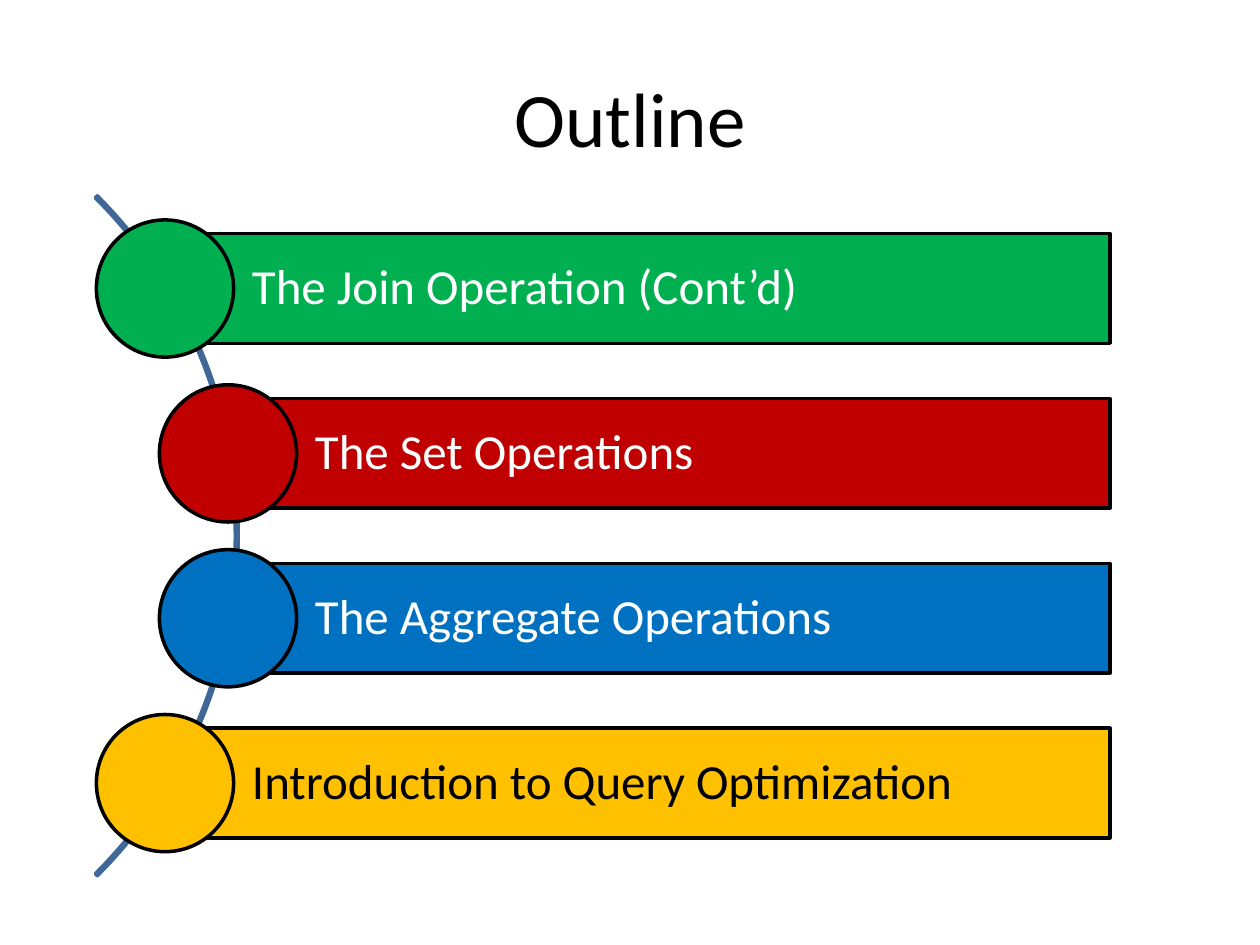
from pptx import Presentation
from pptx.dml.color import RGBColor
from pptx.enum.shapes import MSO_SHAPE
from pptx.enum.text import MSO_ANCHOR, PP_ALIGN
from pptx.util import Pt

BLACK = RGBColor(0x00, 0x00, 0x00)
WHITE = RGBColor(0xFF, 0xFF, 0xFF)
GREEN = RGBColor(0x00, 0xB0, 0x50)
RED = RGBColor(0xC0, 0x00, 0x00)
BLUE = RGBColor(0x00, 0x70, 0xC0)
AMBER = RGBColor(0xFF, 0xC0, 0x00)
ARC_BLUE = RGBColor(0x3F, 0x67, 0x97)
FONT = "Calibri"

HEADING = "Outline"
TOPICS = [
    ("The Join Operation (Cont’d)", GREEN, WHITE, 94.3),
    ("The Set Operations", RED, WHITE, 130.3),
    ("The Aggregate Operations", BLUE, WHITE, 130.3),
    ("Introduction to Query Optimization", AMBER, BLACK, 94.3),
]

BAR_RIGHT = 634.3
BAR_HEIGHT = 62.7
DOT_SIZE = 78.4
PITCH = 94.2
CENTER_Y = 306.2
ARC_SIZE = 549.4
ARC_LEFT = -413.3


def add_outlined(slide, preset, left, top, width, height, line_color, fill=None):
    shape = slide.shapes.add_shape(preset, Pt(left), Pt(top), Pt(width), Pt(height))
    shape.shadow.inherit = False
    shape.line.color.rgb = line_color
    shape.line.width = Pt(2)
    if fill is None:
        shape.fill.background()
    else:
        shape.fill.solid()
        shape.fill.fore_color.rgb = fill
    return shape


def add_run(paragraph, text, size, color):
    run = paragraph.add_run()
    run.text = text
    run.font.name = FONT
    run.font.size = Pt(size)
    run.font.color.rgb = color


def add_topic(slide, index, label, fill, text_color, left):
    middle = CENTER_Y + (index - (len(TOPICS) - 1) / 2) * PITCH
    bar = add_outlined(slide, MSO_SHAPE.RECTANGLE, left, middle - BAR_HEIGHT / 2,
                       BAR_RIGHT - left, BAR_HEIGHT, BLACK, fill)
    frame = bar.text_frame
    frame.word_wrap = True
    frame.vertical_anchor = MSO_ANCHOR.MIDDLE
    frame.margin_left = Pt(49.7)
    frame.margin_top = frame.margin_right = frame.margin_bottom = Pt(5.6)
    paragraph = frame.paragraphs[0]
    paragraph.alignment = PP_ALIGN.LEFT
    paragraph.line_spacing = 0.9
    add_run(paragraph, label, 28, text_color)
    add_outlined(slide, MSO_SHAPE.OVAL, left - DOT_SIZE / 2, middle - DOT_SIZE / 2,
                 DOT_SIZE, DOT_SIZE, BLACK, fill)


def main():
    deck = Presentation()
    deck.slide_width, deck.slide_height = Pt(720), Pt(540)
    slide = deck.slides.add_slide(deck.slide_layouts[5])

    heading = slide.shapes.title
    heading.left, heading.top = Pt(36), Pt(21.6)
    heading.width, heading.height = Pt(648), Pt(90)
    heading.text_frame.vertical_anchor = MSO_ANCHOR.MIDDLE
    paragraph = heading.text_frame.paragraphs[0]
    paragraph.alignment = PP_ALIGN.CENTER
    add_run(paragraph, HEADING, 44, BLACK)

    arc = add_outlined(slide, MSO_SHAPE.BLOCK_ARC, ARC_LEFT, CENTER_Y - ARC_SIZE / 2,
                       ARC_SIZE, ARC_SIZE, ARC_BLUE)
    for position, value in enumerate((189, 27, 0.003)):
        arc.adjustments[position] = value

    for index, topic in enumerate(TOPICS):
        add_topic(slide, index, *topic)

    deck.save("out.pptx")


if __name__ == "__main__":
    main()
